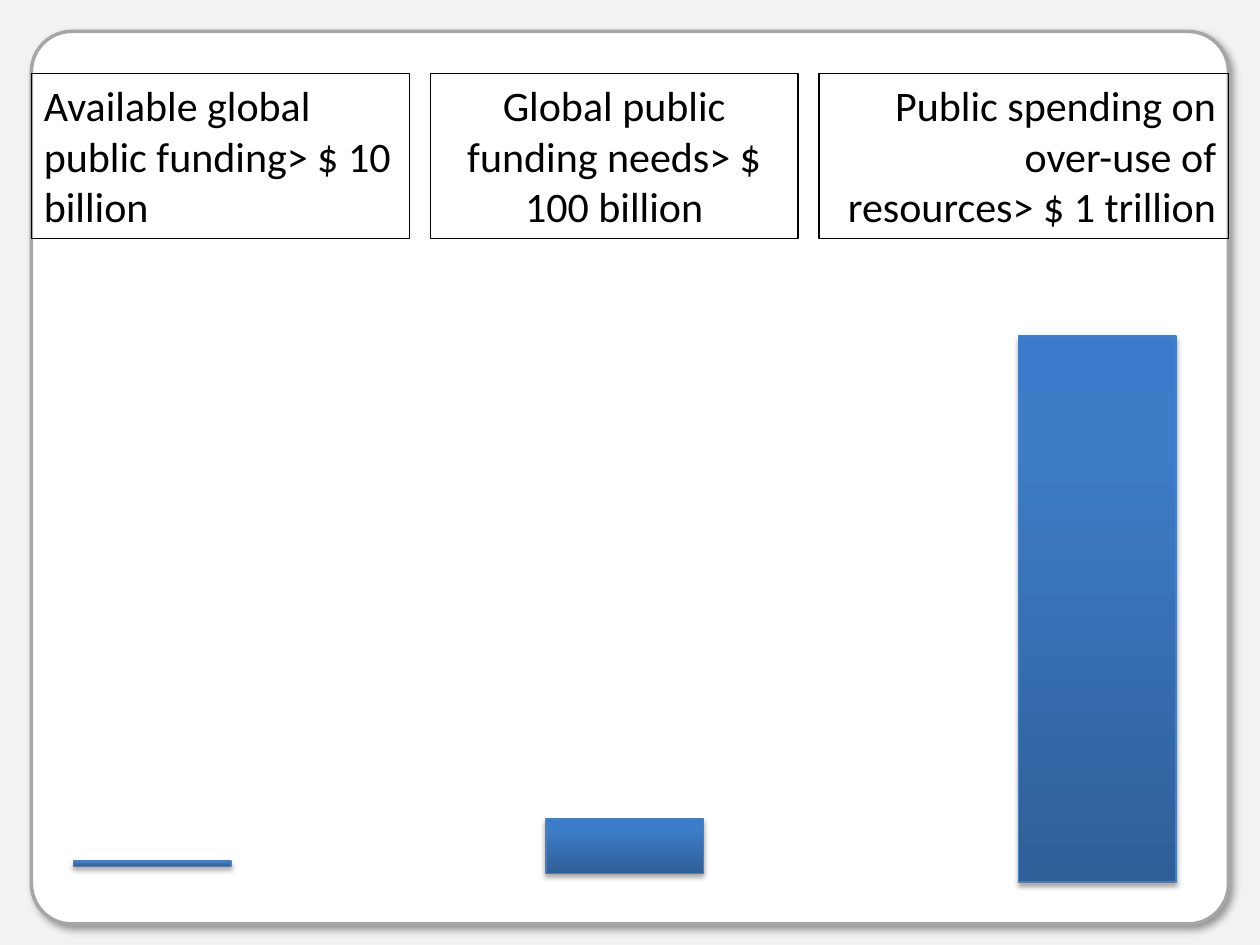
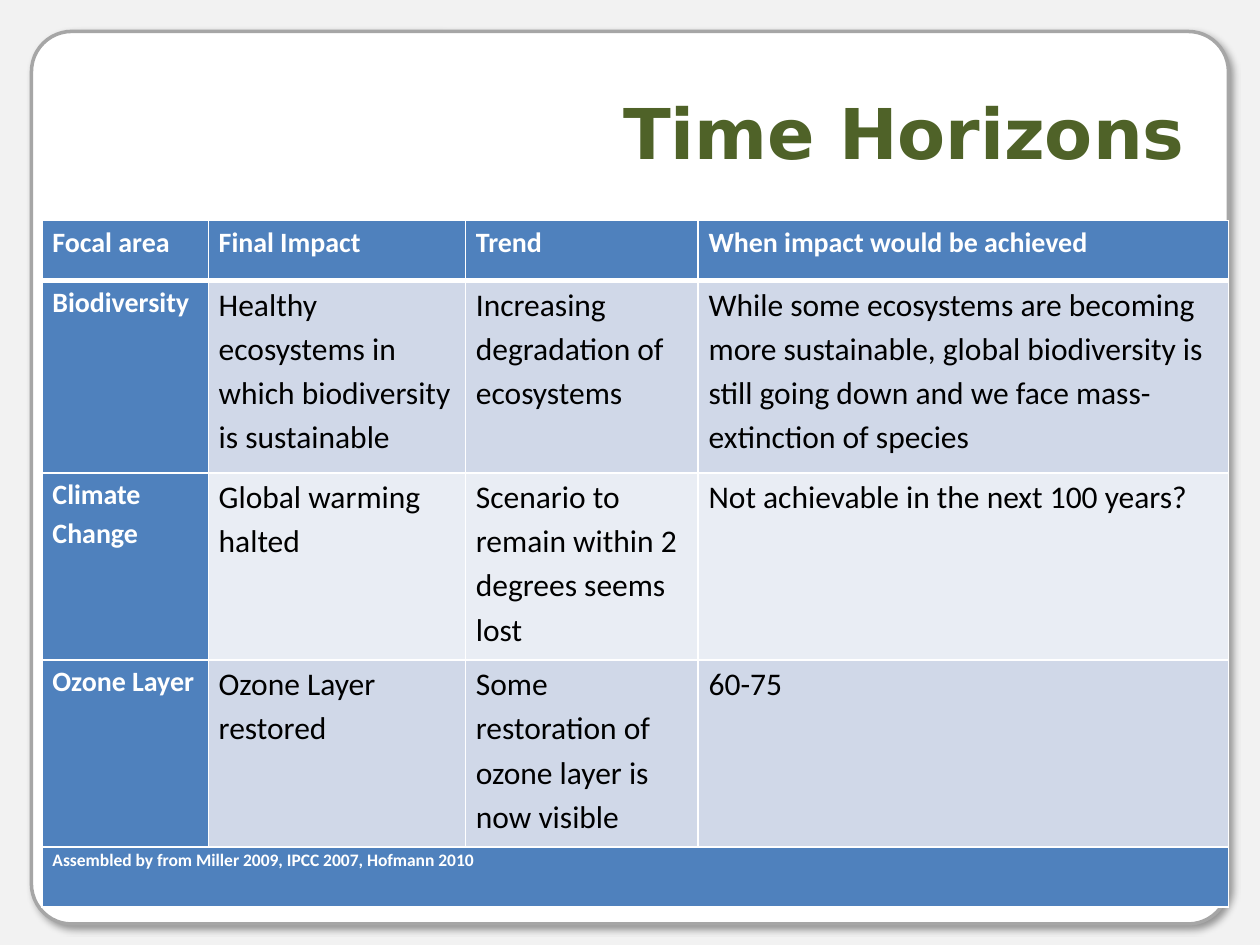
"""Build two slides on environmental funding gaps and time horizons."""

import copy
from dataclasses import dataclass
from typing import Any

import lxml.etree
import pptx
import pptx.dml.color
import pptx.enum.shapes
import pptx.enum.text
import pptx.oxml.ns
import pptx.util

Pt = pptx.util.Pt
RGBColor = pptx.dml.color.RGBColor
ALIGN = pptx.enum.text.PP_ALIGN
ANCHOR = pptx.enum.text.MSO_ANCHOR
AUTO_SIZE = pptx.enum.text.MSO_AUTO_SIZE
SHAPE = pptx.enum.shapes.MSO_SHAPE
qn = pptx.oxml.ns.qn

BLACK = RGBColor(0x00, 0x00, 0x00)
WHITE = RGBColor(0xFF, 0xFF, 0xFF)
BACKDROP = RGBColor(0xF2, 0xF2, 0xF2)
PANEL_EDGE = RGBColor(0xA6, 0xA6, 0xA6)
BAR_EDGE = RGBColor(0x4B, 0x7E, 0xBC)
TITLE_GREEN = RGBColor(0x4F, 0x62, 0x28)
HEADER_BLUE = RGBColor(0x4F, 0x81, 0xBD)
BAND_DARK = RGBColor(0xD0, 0xD8, 0xE8)
BAND_LIGHT = RGBColor(0xE9, 0xED, 0xF4)
BAR_STOPS = (
    (0, RGBColor(0x2F, 0x5F, 0x99)),
    (0.8, RGBColor(0x3D, 0x7C, 0xC7)),
    (1, RGBColor(0x3A, 0x7C, 0xCB)),
)

TITLE_FONT = {"name": "DejaVu Sans", "size": Pt(40), "bold": True}
LABEL_FONT = {"name": "Calibri", "size": Pt(24), "bold": False}
HEADING_FONT = {"name": "Calibri", "size": Pt(16), "bold": True}
BODY_FONT = {"name": "Calibri", "size": Pt(18), "bold": False}
SOURCE_FONT = {"name": "Calibri", "size": Pt(10), "bold": True}
LABEL_FRAME = {"word_wrap": True, "auto_size": AUTO_SIZE.SHAPE_TO_FIT_TEXT}
TITLE_FRAME = {"word_wrap": True, "vertical_anchor": ANCHOR.MIDDLE}
CELL_MARGINS = {
    "margin_left": Pt(6),
    "margin_right": Pt(6),
    "margin_top": Pt(0),
    "margin_bottom": Pt(0),
}


@dataclass(frozen=True)
class Shadow:
    """Outer shadow: opacity in percent, lengths in points, angle in degrees."""

    opacity: int
    blur: float
    distance: float
    angle: int


@dataclass(frozen=True)
class Funding:
    """One funding level: its label box and its bar."""

    label: str
    label_width: float
    align: Any
    bar_top: float
    bar_height: float


PANEL_SHADOW = Shadow(40, 4, 3, 45)
BAR_SHADOW = Shadow(35, 3.1, 1.8, 90)

FUNDING_LEVELS = (
    Funding("Available global public funding> $ 10 billion", 216, ALIGN.LEFT, 492, 3),
    Funding("Global public funding needs> $ 100 billion", 210, ALIGN.CENTER, 468, 31),
    Funding("Public spending on over-use of resources> $ 1 trillion", 234, ALIGN.RIGHT, 192, 312),
)
LABEL_LEFT, LABEL_TOP, LABEL_HEIGHT, LABEL_GAP = 18, 42, 94.3, 12
BAR_LEFT, BAR_PITCH, BAR_WIDTH = 42, 270, 90

HORIZONS = (
    ("Focal area", "Final Impact", "Trend", "When impact would be achieved"),
    (
        "Biodiversity",
        "Healthy ecosystems in which biodiversity is sustainable",
        "Increasing degradation of ecosystems",
        "While some ecosystems are becoming more sustainable, global biodiversity "
        "is still going down and we face mass-extinction of species",
    ),
    (
        "Climate Change",
        "Global warming halted",
        "Scenario to remain within 2 degrees seems lost",
        "Not achievable in the next 100 years?",
    ),
    (
        "Ozone Layer",
        "Ozone Layer restored",
        "Some restoration of ozone layer is now visible",
        "60-75",
    ),
    ("Assembled by from Miller 2009, IPCC 2007, Hofmann 2010", "", "", ""),
)
COLUMN_WIDTHS = (95, 147, 133, 303)
ROW_HEIGHTS = (34.2, 110, 107, 107, 34.2)


def apply_format(target: Any, values: dict[str, Any]) -> None:
    """Set every attribute in values on the target."""
    for name, value in values.items():
        setattr(target, name, value)


def write(paragraph: Any, text: str, font: dict[str, Any], color: RGBColor) -> None:
    """Put one formatted run into the paragraph."""
    run = paragraph.add_run()
    run.text = text
    apply_format(run.font, font)
    run.font.color.rgb = color


def outline(shape: Any, color: RGBColor, width: float) -> None:
    """Give the shape a plain line."""
    shape.line.color.rgb = color
    shape.line.width = Pt(width)


def cast_shadow(shape: Any, shadow: Shadow) -> None:
    """Replace the theme shadow by the given one."""
    shape.shadow.inherit = False
    effects = shape.element.spPr.find(qn("a:effectLst"))
    outer = lxml.etree.SubElement(
        effects,
        qn("a:outerShdw"),
        blurRad=str(Pt(shadow.blur)),
        dist=str(Pt(shadow.distance)),
        dir=str(shadow.angle * 60000),
        algn="ctr",
        rotWithShape="0",
    )
    black = lxml.etree.SubElement(outer, qn("a:srgbClr"), val=str(BLACK))
    lxml.etree.SubElement(black, qn("a:alpha"), val=str(shadow.opacity * 1000))


def add_framed_slide(deck: Any) -> Any:
    """Add a blank slide with the grey backdrop and the rounded panel."""
    slide = deck.slides.add_slide(deck.slide_layouts[6])
    slide.background.fill.solid()
    slide.background.fill.fore_color.rgb = BACKDROP
    panel = slide.shapes.add_shape(
        SHAPE.ROUNDED_RECTANGLE, Pt(18), Pt(18), Pt(684), Pt(510)
    )
    panel.adjustments[0] = 0.045
    panel.fill.solid()
    panel.fill.fore_color.rgb = WHITE
    outline(panel, PANEL_EDGE, 2)
    cast_shadow(panel, PANEL_SHADOW)
    return slide


def add_bar(slide: Any, left: float, top: float, height: float) -> None:
    """Draw one gradient bar."""
    bar = slide.shapes.add_shape(
        SHAPE.RECTANGLE, Pt(left), Pt(top), Pt(BAR_WIDTH), Pt(height)
    )
    bar.fill.gradient()
    bar.fill.gradient_angle = 90
    stop_list = bar.element.spPr.find(qn("a:gradFill")).find(qn("a:gsLst"))
    stop_list.append(copy.deepcopy(stop_list[-1]))
    for stop, (position, color) in zip(bar.fill.gradient_stops, BAR_STOPS):
        stop.position = position
        stop.color.rgb = color
    outline(bar, BAR_EDGE, 0.75)
    cast_shadow(bar, BAR_SHADOW)


def add_label(slide: Any, left: float, level: Funding) -> None:
    """Draw the outlined label of one funding level."""
    label = slide.shapes.add_textbox(
        Pt(left), Pt(LABEL_TOP), Pt(level.label_width), Pt(LABEL_HEIGHT)
    )
    outline(label, BLACK, 0.75)
    apply_format(label.text_frame, LABEL_FRAME)
    paragraph = label.text_frame.paragraphs[0]
    paragraph.alignment = level.align
    write(paragraph, level.label, LABEL_FONT, BLACK)


def build_funding_slide(deck: Any) -> None:
    """Compare the three funding levels."""
    slide = add_framed_slide(deck)
    label_left = LABEL_LEFT
    for index, level in enumerate(FUNDING_LEVELS):
        add_bar(slide, BAR_LEFT + index * BAR_PITCH, level.bar_top, level.bar_height)
        add_label(slide, label_left, level)
        label_left += level.label_width + LABEL_GAP


def add_title(slide: Any, text: str) -> None:
    """Write the right-aligned slide title."""
    title = slide.shapes.add_textbox(Pt(36), Pt(30), Pt(648), Pt(90))
    apply_format(title.text_frame, TITLE_FRAME)
    paragraph = title.text_frame.paragraphs[0]
    paragraph.alignment = ALIGN.RIGHT
    write(paragraph, text, TITLE_FONT, TITLE_GREEN)


def set_borders(cell: Any, row: int) -> None:
    """Draw white cell borders, thicker below the header row."""
    widths = {"L": 1, "R": 1, "T": 3 if row == 1 else 1, "B": 3 if row == 0 else 1}
    properties = cell._tc.get_or_add_tcPr()
    for side, width in widths.items():
        border = lxml.etree.SubElement(properties, qn(f"a:ln{side}"), w=str(Pt(width)))
        fill = lxml.etree.SubElement(border, qn("a:solidFill"))
        lxml.etree.SubElement(fill, qn("a:srgbClr"), val=str(WHITE))


def fill_cell(cell: Any, row: int, column: int, text: str) -> None:
    """Format one table cell by its place and write its text."""
    source_row = row == len(HORIZONS) - 1
    heading = row == 0 or column == 0 or source_row
    band = BAND_DARK if row % 2 else BAND_LIGHT
    set_borders(cell, row)
    apply_format(cell, CELL_MARGINS)
    cell.fill.solid()
    cell.fill.fore_color.rgb = HEADER_BLUE if heading else band
    if text:
        paragraph = cell.text_frame.paragraphs[0]
        paragraph.line_spacing = 1.15
        heading_font = SOURCE_FONT if source_row else HEADING_FONT
        font = heading_font if heading else BODY_FONT
        write(paragraph, text, font, WHITE if heading else BLACK)


def build_horizons_slide(deck: Any) -> None:
    """Tabulate when each focal area reaches its impact."""
    slide = add_framed_slide(deck)
    add_title(slide, "Time Horizons")
    horizons = slide.shapes.add_table(
        len(ROW_HEIGHTS),
        len(COLUMN_WIDTHS),
        Pt(24),
        Pt(126),
        Pt(sum(COLUMN_WIDTHS)),
        Pt(sum(ROW_HEIGHTS)),
    ).table
    for column, width in zip(horizons.columns, COLUMN_WIDTHS):
        column.width = Pt(width)
    for row, height in zip(horizons.rows, ROW_HEIGHTS):
        row.height = Pt(height)
    for row_index, texts in enumerate(HORIZONS):
        for column_index, text in enumerate(texts):
            cell = horizons.cell(row_index, column_index)
            fill_cell(cell, row_index, column_index, text)
    last_row = len(HORIZONS) - 1
    horizons.cell(last_row, 0).merge(horizons.cell(last_row, len(COLUMN_WIDTHS) - 1))


def main() -> None:
    """Build and save the deck."""
    deck = pptx.Presentation()
    deck.slide_width, deck.slide_height = Pt(720), Pt(540)
    build_funding_slide(deck)
    build_horizons_slide(deck)
    deck.save("out.pptx")


if __name__ == "__main__":
    main()
